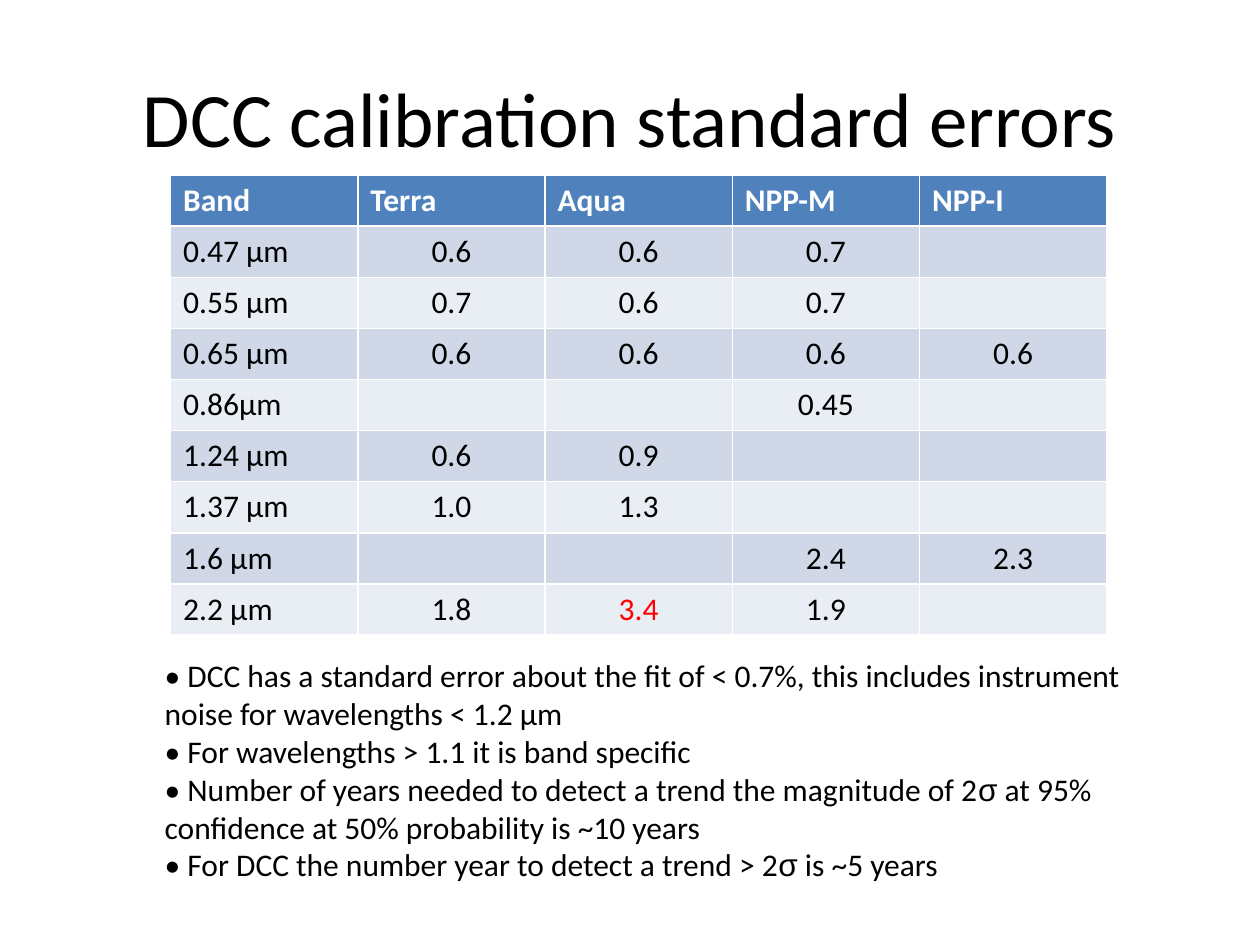
from pptx import Presentation
from pptx.dml.color import RGBColor
from pptx.enum.text import MSO_ANCHOR, PP_ALIGN
from pptx.util import Cm, Pt

COLORS = {
    "text": "000000",
    "header_text": "FFFFFF",
    "header": "4F81BD",
    "odd_band": "D0D8E8",
    "even_band": "E9EDF4",
    "alert": "FF0000",
}
FONT, SYMBOL_FONT = "Calibri", "Arial"
SATELLITES = ["Band", "Terra", "Aqua", "NPP-M", "NPP-I"]
ERRORS = [
    ["0.47 µm", "0.6", "0.6", "0.7", ""],
    ["0.55 µm", "0.7", "0.6", "0.7", ""],
    ["0.65 µm", "0.6", "0.6", "0.6", "0.6"],
    ["0.86µm", "", "", "0.45", ""],
    ["1.24 µm", "0.6", "0.9", "", ""],
    ["1.37 µm", "1.0", "1.3", "", ""],
    ["1.6 µm", "", "", "2.4", "2.3"],
    ["2.2 µm", "1.8", "3.4", "1.9", ""],
]
ALERT_VALUE = "3.4"
FINDINGS = [
    "•\u00a0DCC has a standard error about the fit of < 0.7%, this includes "
    "instrument noise for wavelengths < 1.2 µm",
    "• For wavelengths > 1.1 it is band specific",
    "• Number of years needed to detect a trend the magnitude of 2σ at 95% "
    "confidence at 50% probability is ~10 years",
    "• For DCC the number year to detect a trend > 2σ is ~5 years",
]


def style(paragraph, size=18, color="text", bold=False, align=PP_ALIGN.LEFT):
    """Set the font and alignment of a paragraph."""
    paragraph.alignment = align
    font = paragraph.font
    font.name, font.size, font.bold = FONT, Pt(size), bold
    font.color.rgb = RGBColor.from_string(COLORS[color])


def place_title(slide, left, top, width, height):
    """Move and fill the title placeholder."""
    title = slide.shapes.title
    title.left, title.top, title.width, title.height = left, top, width, height
    title.text_frame.text = "DCC calibration standard errors"
    title.text_frame.vertical_anchor = MSO_ANCHOR.MIDDLE
    style(title.text_frame.paragraphs[0], size=44, align=PP_ALIGN.CENTER)


def fill_cell(cell, value, band, **look):
    """Write one table cell on its band colour."""
    cell.fill.solid()
    cell.fill.fore_color.rgb = RGBColor.from_string(COLORS[band])
    cell.text = value
    style(cell.text_frame.paragraphs[0], **look)


def add_error_table(slide, left, top, width, height):
    """Add the table of standard errors by band and satellite."""
    table = slide.shapes.add_table(
        len(ERRORS) + 1, len(SATELLITES), left, top, width, height
    ).table
    for col, satellite in enumerate(SATELLITES):
        fill_cell(table.cell(0, col), satellite, "header",
                  color="header_text", bold=True)
    for row, errors in enumerate(ERRORS, start=1):
        band = "odd_band" if row % 2 else "even_band"
        for col, value in enumerate(errors):
            fill_cell(table.cell(row, col), value, band,
                      color="alert" if value == ALERT_VALUE else "text",
                      align=PP_ALIGN.CENTER if col else PP_ALIGN.LEFT)


def add_findings(slide, left, top, width, height):
    """Add the list of findings, with sigma in the symbol font."""
    frame = slide.shapes.add_textbox(left, top, width, height).text_frame
    frame.word_wrap = True
    for index, finding in enumerate(FINDINGS):
        paragraph = frame.add_paragraph() if index else frame.paragraphs[0]
        style(paragraph)
        before, sigma, after = finding.partition("σ")
        paragraph.add_run().text = before
        if sigma:
            symbol = paragraph.add_run()
            symbol.text = sigma
            symbol.font.name = SYMBOL_FONT
            paragraph.add_run().text = after


def main():
    """Build and save the slide."""
    deck = Presentation()
    deck.slide_width, deck.slide_height = Cm(25.4), Cm(19.05)
    slide = deck.slides.add_slide(deck.slide_layouts[5])
    place_title(slide, Cm(1.27), Cm(0.76), Cm(22.86), Cm(3.18))
    add_error_table(slide, Cm(3.44), Cm(3.53), Cm(18.87), Cm(9.27))
    add_findings(slide, Cm(3.07), Cm(13.11), Cm(21.06), Cm(4.88))
    deck.save("out.pptx")


if __name__ == "__main__":
    main()
